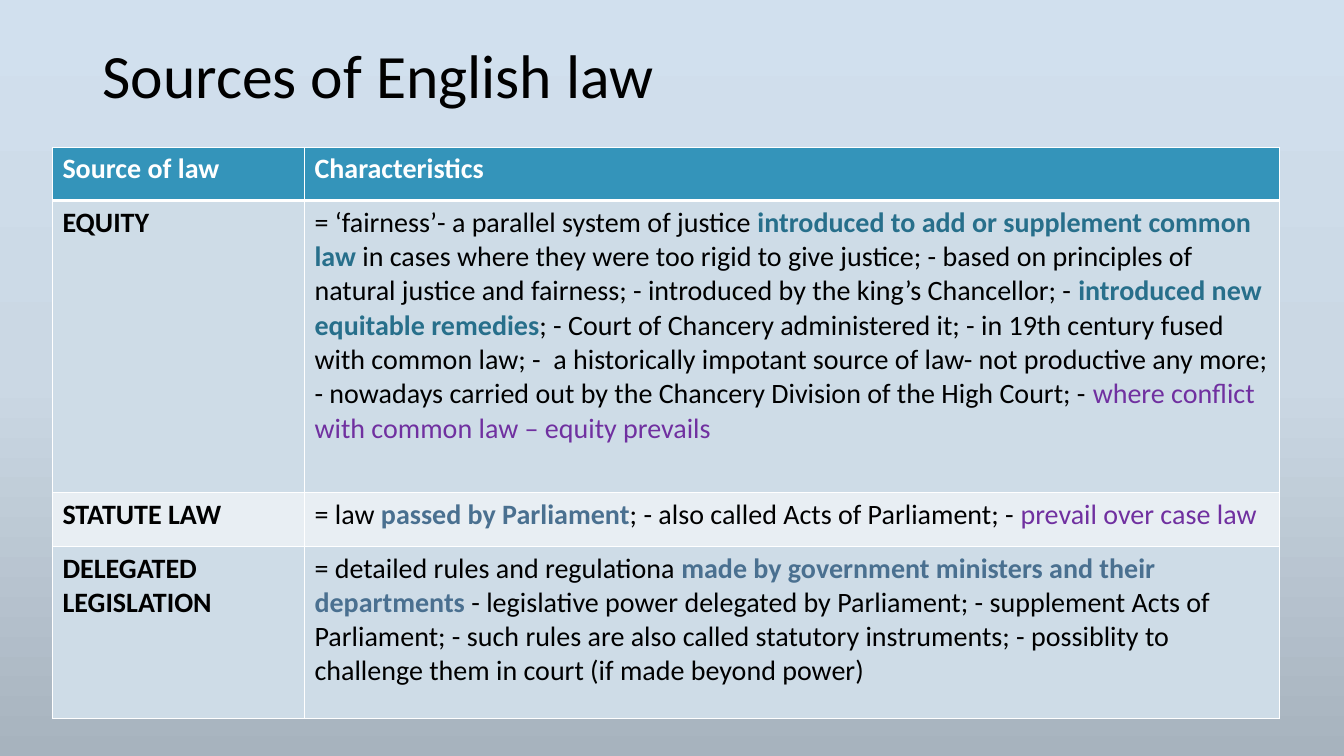
import copy

import lxml.etree
import pptx
import pptx.dml.color
import pptx.enum.text
import pptx.oxml.ns
import pptx.util

Inches = pptx.util.Inches
FONT = "Calibri"
BLACK, WHITE, PURPLE = "000000", "FFFFFF", "7030A0"
TEAL, STEEL = "276F8B", "4A7090"
HEADER_FILL, ODD_FILL, EVEN_FILL = "3494BA", "CEDCE7", "E8EEF3"
COLUMN_WIDTHS = [2.5, 9.67]
ROW_HEIGHTS = [0.53, 2.9, 0.53, 1.71]

ROWS = [
    ("EQUITY", [
        ("= ‘fairness’- a parallel system of justice ", {}),
        ("introduced to add or supplement common law ", {"color": TEAL, "bold": True}),
        ("in cases where they were too rigid to give justice; - based on principles of "
         "natural justice and fairness; - introduced by the king’s Chancellor; - ", {}),
        ("introduced new equitable remedies", {"color": TEAL, "bold": True}),
        ("; - Court of Chancery administered it; - in 19th century fused with common law; "
         "-  a historically impotant source of law- not productive any more; - nowadays "
         "carried out by the Chancery Division of the High Court; - ", {}),
        ("where conflict with common law – equity prevails", {"color": PURPLE}),
    ]),
    ("STATUTE LAW", [
        ("= law ", {}),
        ("passed by Parliament", {"color": STEEL, "bold": True}),
        ("; - also called Acts of Parliament; - ", {}),
        ("prevail over case law", {"color": PURPLE}),
    ]),
    ("DELEGATED LEGISLATION", [
        ("= detailed rules and regulationa ", {}),
        ("made by government ministers and their departments ",
         {"color": STEEL, "bold": True}),
        ("- legislative power delegated by Parliament; - supplement Acts of Parliament; "
         "- such rules are also called statutory instruments; - possiblity to challenge "
         "them in court (if made beyond power)", {}),
    ]),
]


def rgb(value):
    """Return the colour for a hex string."""
    return pptx.dml.color.RGBColor.from_string(value)


def add_text(p, text, size=20, color=BLACK, bold=False):
    """Append one formatted run to a paragraph."""
    r = p.add_run()
    r.text = text
    r.font.name = FONT
    r.font.size = pptx.util.Pt(size)
    r.font.bold = bold
    r.font.color.rgb = rgb(color)


def paint_background(slide):
    """Fill the slide with a three-stop vertical gradient."""
    fill = slide.background.fill
    fill.gradient()
    fill.gradient_angle = 270
    stops = slide.element.find(".//" + pptx.oxml.ns.qn("a:gsLst"))
    stops.append(copy.deepcopy(stops[0]))
    colors = ["D1E0EE", "CBD8E4", "A7B3BE"]
    for stop, color, position in zip(fill.gradient_stops, colors, [0, 0.5, 1]):
        stop.color.rgb = rgb(color)
        stop.position = position


def add_title(slide, left, top, width, height):
    """Place the slide title in the given box."""
    sp = slide.shapes.add_textbox(Inches(left), Inches(top), Inches(width), Inches(height))
    tf = sp.text_frame
    tf.word_wrap = True
    tf.vertical_anchor = pptx.enum.text.MSO_ANCHOR.MIDDLE
    p = tf.paragraphs[0]
    p.line_spacing = 0.9
    add_text(p, "Sources of English law", size=44)


def set_borders(cell, **widths):
    """Draw white borders of the given point widths, keyed by side L, R, T, B."""
    tc_pr = cell._tc.get_or_add_tcPr()
    for side, width in widths.items():
        ln = lxml.etree.SubElement(tc_pr, pptx.oxml.ns.qn("a:ln" + side),
                                   w=str(pptx.util.Pt(width)))
        solid = lxml.etree.SubElement(ln, pptx.oxml.ns.qn("a:solidFill"))
        lxml.etree.SubElement(solid, pptx.oxml.ns.qn("a:srgbClr"), val=WHITE)


def fill_cell(cell, runs, fill, top=1, bottom=1):
    """Give a cell its borders, fill and text runs."""
    set_borders(cell, L=1, R=1, T=top, B=bottom)
    cell.fill.solid()
    cell.fill.fore_color.rgb = rgb(fill)
    for text, style in runs:
        add_text(cell.text_frame.paragraphs[0], text, **style)


def add_sources_table(slide, left, top):
    """Place the table of law sources with its corner at the given point."""
    table = slide.shapes.add_table(
        len(ROW_HEIGHTS), len(COLUMN_WIDTHS), Inches(left), Inches(top),
        Inches(sum(COLUMN_WIDTHS)), Inches(sum(ROW_HEIGHTS))).table
    for column, width in zip(table.columns, COLUMN_WIDTHS):
        column.width = Inches(width)
    for row, height in zip(table.rows, ROW_HEIGHTS):
        row.height = Inches(height)
    for col, heading in enumerate(["Source of law", "Characteristics"]):
        runs = [(heading, {"color": WHITE, "bold": True})]
        fill_cell(table.cell(0, col), runs, HEADER_FILL, bottom=3)
    for row, (source, characteristics) in enumerate(ROWS, 1):
        fill = ODD_FILL if row % 2 else EVEN_FILL
        edge = 3 if row == 1 else 1
        fill_cell(table.cell(row, 0), [(source, {"bold": True})], fill, top=edge)
        fill_cell(table.cell(row, 1), characteristics, fill, top=edge)


def main():
    """Build the slide and save it."""
    prs = pptx.Presentation()
    prs.slide_width, prs.slide_height = Inches(13.33), Inches(7.5)
    slide = prs.slides.add_slide(prs.slide_layouts[6])
    paint_background(slide)
    add_title(slide, 0.92, 0.4, 11.5, 0.76)
    add_sources_table(slide, 0.52, 1.46)
    prs.save("out.pptx")


if __name__ == "__main__":
    main()
